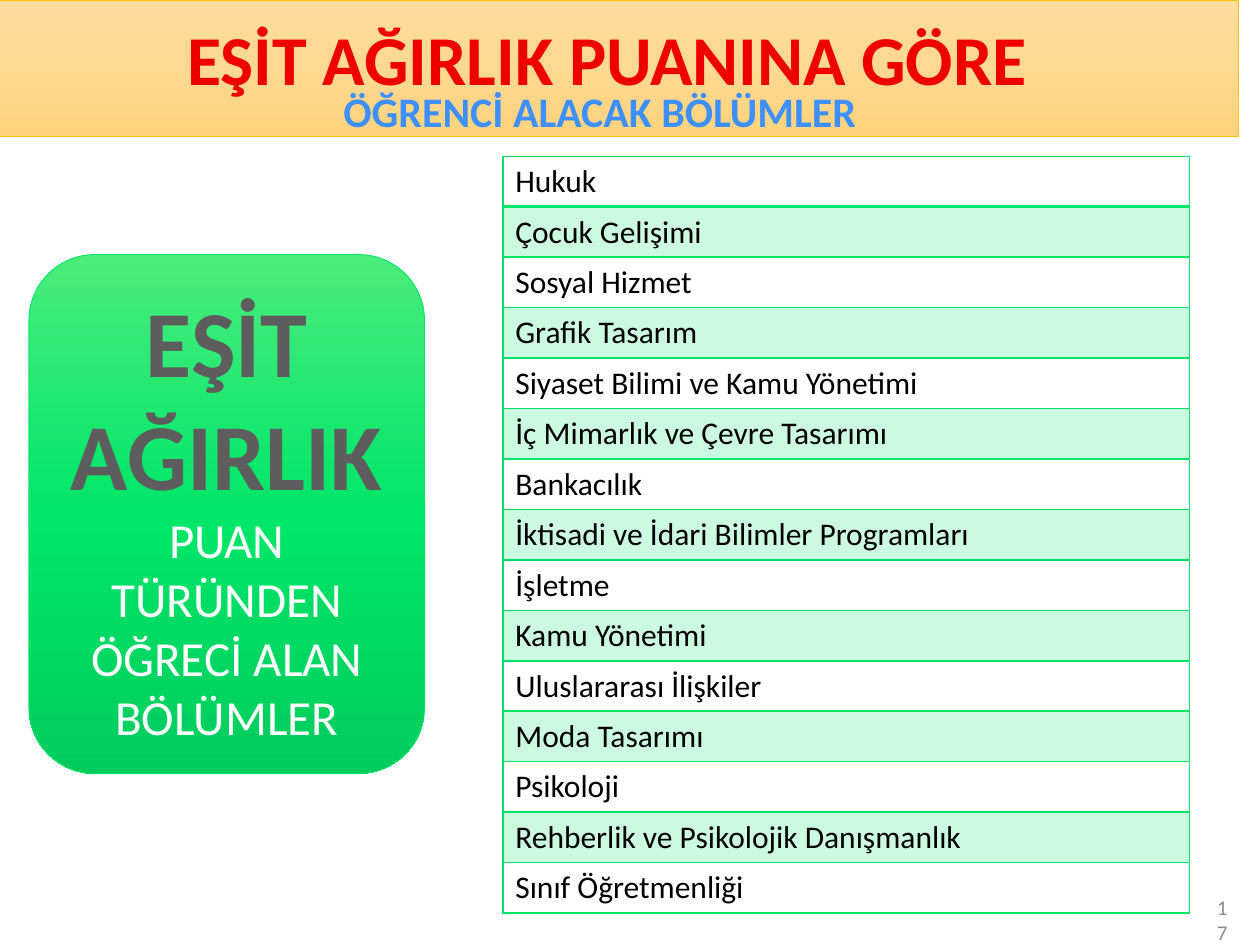
"""Builds the slide listing the departments that admit by equal-weight score."""
import lxml.etree
import pptx
import pptx.dml.color
import pptx.enum.shapes
import pptx.enum.text
import pptx.oxml.ns
import pptx.util

RGBColor = pptx.dml.color.RGBColor
Inches = pptx.util.Inches
Pt = pptx.util.Pt
PP_ALIGN = pptx.enum.text.PP_ALIGN
MSO_ANCHOR = pptx.enum.text.MSO_ANCHOR
MSO_SHAPE = pptx.enum.shapes.MSO_SHAPE
qn = pptx.oxml.ns.qn

DEPARTMENTS = [
    "Hukuk",
    "Çocuk Gelişimi",
    "Sosyal Hizmet",
    "Grafik Tasarım",
    "Siyaset Bilimi ve Kamu Yönetimi",
    "İç Mimarlık ve Çevre Tasarımı",
    "Bankacılık",
    "İktisadi ve İdari Bilimler Programları",
    "İşletme",
    "Kamu Yönetimi",
    "Uluslararası İlişkiler",
    "Moda Tasarımı",
    "Psikoloji",
    "Rehberlik ve Psikolojik Danışmanlık",
    "Sınıf Öğretmenliği",
]

FONT = "Calibri"
BLACK = RGBColor(0x00, 0x00, 0x00)
WHITE = RGBColor(0xFF, 0xFF, 0xFF)
RED = RGBColor(0xEF, 0x00, 0x00)
BLUE = RGBColor(0x3F, 0x90, 0xFF)
DARK_GREY = RGBColor(0x5D, 0x5D, 0x5D)
LIGHT_GREY = RGBColor(0x8C, 0x8C, 0x8C)
GREEN = RGBColor(0x01, 0xE5, 0x69)
PALE_GREEN = RGBColor(0xCC, 0xFA, 0xE1)
GOLD = RGBColor(0xFF, 0xC3, 0x0B)
GREEN_STOPS = [RGBColor(0x4B, 0xEC, 0x7B), RGBColor(0x00, 0xE6, 0x69), RGBColor(0x00, 0xCC, 0x5D)]
GOLD_STOPS = [RGBColor(0xFF, 0xDD, 0x9F), RGBColor(0xFF, 0xD8, 0x91), RGBColor(0xFF, 0xD3, 0x7D)]

SLIDE_WIDTH, SLIDE_HEIGHT = 10, 7.5
BANNER = (-0.17, 0, SLIDE_WIDTH, 1.08)
CARD = (0.23, 2.02, 3.14, 4.12)
TABLE = (3.99, 1.24, 5.45, 6)
CARD_RUNS = [
    ("EŞİT AĞIRLIK", 54, DARK_GREY, True),
    (" ", 28, DARK_GREY, True),
    ("PUAN TÜRÜNDEN ÖĞRECİ ALAN BÖLÜMLER", 28, WHITE, False),
]
TEXTS = [
    ((-0.18, 0.07, SLIDE_WIDTH, 1.18), ("EŞİT AĞIRLIK PUANINA GÖRE", 40, RED, True),
     PP_ALIGN.CENTER, MSO_ANCHOR.TOP),
    ((0.27, 0.63, 8.98, 0.5), ("ÖĞRENCİ ALACAK BÖLÜMLER", 24, BLUE, True),
     PP_ALIGN.CENTER, MSO_ANCHOR.TOP),
    ((9.49, 7.1, 0.35, 0.4), ("17", 12, LIGHT_GREY, False),
     PP_ALIGN.RIGHT, MSO_ANCHOR.MIDDLE),
]


def inches(box):
    return [Inches(length) for length in box]


def write_runs(text_frame, runs, alignment, anchor):
    text_frame.word_wrap = True
    text_frame.vertical_anchor = anchor
    paragraph = text_frame.paragraphs[0]
    paragraph.alignment = alignment
    for text, size, color, bold in runs:
        run = paragraph.add_run()
        run.text = text
        run.font.name = FONT
        run.font.size = Pt(size)
        run.font.bold = bold
        run.font.color.rgb = color


def add_gradient_shape(slide, preset, box, colors, line_color):
    shape = slide.shapes.add_shape(preset, *inches(box))
    shape.shadow.inherit = False
    shape.fill.gradient()
    shape.fill.gradient_angle = 270
    stops = shape._element.spPr.find(".//" + qn("a:gsLst"))
    for stop in list(stops):
        stops.remove(stop)
    for index, color in enumerate(colors):
        position = 100000 * index // (len(colors) - 1)
        stop = lxml.etree.SubElement(stops, qn("a:gs"), pos=str(position))
        lxml.etree.SubElement(stop, qn("a:srgbClr"), val=str(color))
    shape.line.color.rgb = line_color
    shape.line.width = Pt(0.5)
    return shape


def set_borders(cell, widths):
    properties = cell._tc.get_or_add_tcPr()
    for index, (side, width) in enumerate(widths.items()):
        border = lxml.etree.Element(qn("a:ln" + side), w=str(Pt(width)))
        fill = lxml.etree.SubElement(border, qn("a:solidFill"))
        lxml.etree.SubElement(fill, qn("a:srgbClr"), val=str(GREEN))
        properties.insert(index, border)


def add_department_table(slide):
    row_count = len(DEPARTMENTS)
    table = slide.shapes.add_table(row_count, 1, *inches(TABLE)).table
    for index, department in enumerate(DEPARTMENTS):
        table.rows[index].height = Inches(TABLE[3] / row_count)
        cell = table.cell(index, 0)
        write_runs(cell.text_frame, [(department, 18, BLACK, False)], PP_ALIGN.LEFT, MSO_ANCHOR.TOP)
        cell.fill.solid()
        cell.fill.fore_color.rgb = PALE_GREEN if index % 2 else WHITE
        top, bottom = (2 if index == 1 else 1), (2 if index == 0 else 1)
        set_borders(cell, {"L": 1, "R": 1, "T": top, "B": bottom})


def main():
    presentation = pptx.Presentation()
    presentation.slide_width = Inches(SLIDE_WIDTH)
    presentation.slide_height = Inches(SLIDE_HEIGHT)
    slide = presentation.slides.add_slide(presentation.slide_layouts[6])
    card = add_gradient_shape(slide, MSO_SHAPE.ROUNDED_RECTANGLE, CARD, GREEN_STOPS, GREEN)
    write_runs(card.text_frame, CARD_RUNS, PP_ALIGN.CENTER, MSO_ANCHOR.MIDDLE)
    add_gradient_shape(slide, MSO_SHAPE.RECTANGLE, BANNER, GOLD_STOPS, GOLD)
    for box, run, alignment, anchor in TEXTS:
        text_box = slide.shapes.add_textbox(*inches(box))
        write_runs(text_box.text_frame, [run], alignment, anchor)
    add_department_table(slide)
    presentation.save("out.pptx")


if __name__ == "__main__":
    main()
